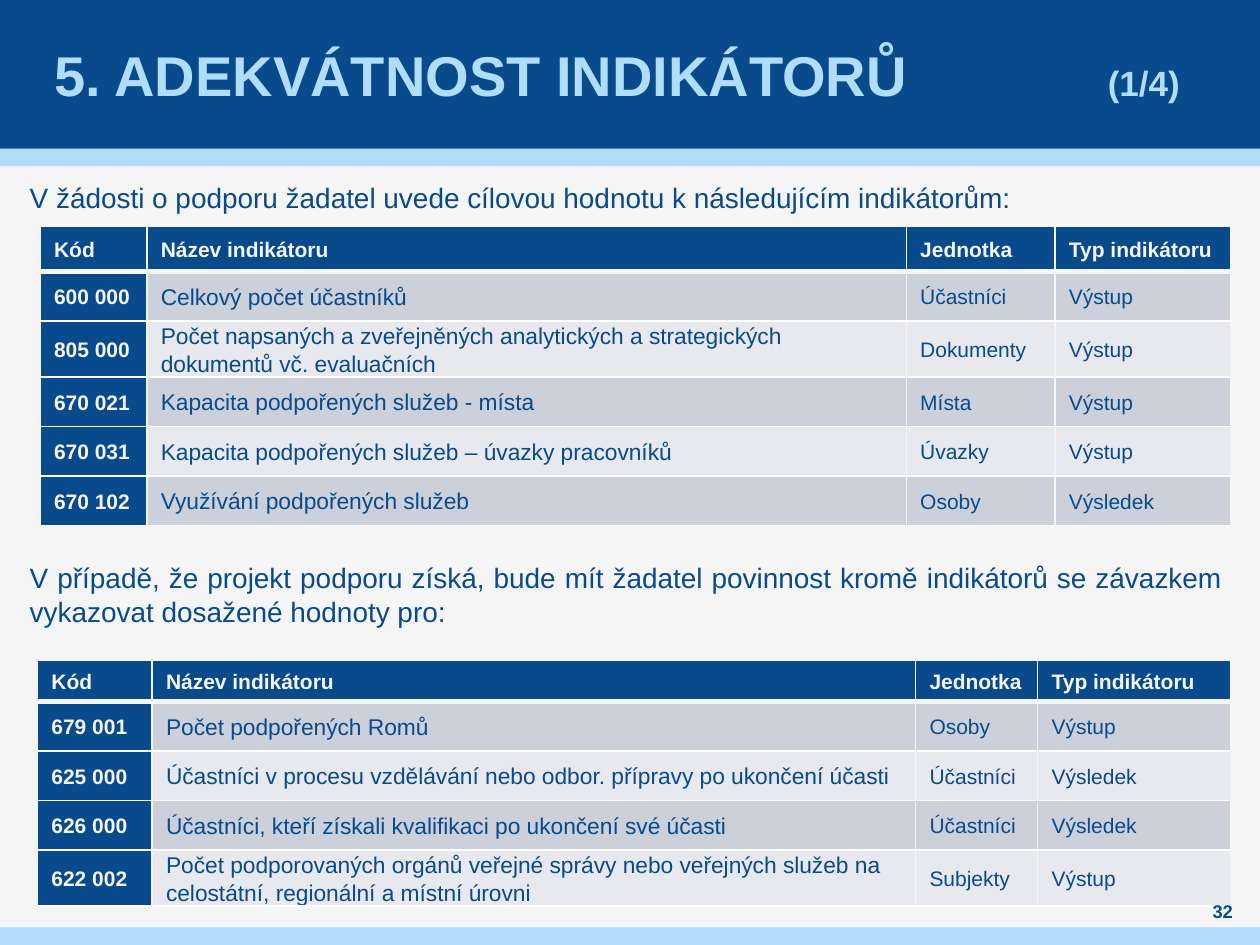
from pptx import Presentation
from pptx.dml.color import RGBColor
from pptx.enum.shapes import MSO_SHAPE
from pptx.enum.text import MSO_ANCHOR, PP_ALIGN
from pptx.oxml.xmlchemy import OxmlElement
from pptx.util import Pt
from lxml.etree import SubElement
from pptx.oxml.ns import qn

NAVY, SKY, PAPER = "084A8B", "AFDDFA", "F5F5F5"
BANDS = ["E7E9EE", "CCD0DA"]


def rgb(value):
    return RGBColor.from_string(value)


def style(p, size, color, bold=False):
    for r in p.runs:
        r.font.name = "Arial"
        r.font.size = Pt(size)
        r.font.bold = bold
        r.font.color.rgb = rgb(color)


prs = Presentation()
prs.slide_width, prs.slide_height = Pt(720), Pt(540)
s = prs.slides.add_slide(prs.slide_layouts[6])
s.background.fill.solid()
s.background.fill.fore_color.rgb = rgb(PAPER)

# Header band, its stripe and the footer stripe
for top, height, color in [(85, 10, SKY), (0, 85, NAVY), (530, 10, SKY)]:
    sp = s.shapes.add_shape(MSO_SHAPE.RECTANGLE, 0, Pt(top), Pt(720), Pt(height))
    sp.shadow.inherit = False
    sp.fill.solid()
    sp.fill.fore_color.rgb = rgb(color)
    sp.line.fill.background()

# Indicator tables: left, top, column widths, header height, rows
header = ("Kód", "Název indikátoru", "Jednotka", "Typ indikátoru")
tables = [
    (22.9, 129.2, (61, 434, 85, 100.7), 26, [
        ("600 000", "Celkový počet účastníků", "Účastníci", "Výstup"),
        ("805 000", "Počet napsaných a zveřejněných analytických a strategických "
         "dokumentů vč. evaluačních", "Dokumenty", "Výstup"),
        ("670 021", "Kapacita podpořených služeb - místa", "Místa", "Výstup"),
        ("670 031", "Kapacita podpořených služeb – úvazky pracovníků", "Úvazky", "Výstup"),
        ("670 102", "Využívání podpořených služeb", "Osoby", "Výsledek")]),
    (21.4, 377.3, (65.5, 436.3, 69.8, 110.2), 23.6, [
        ("679 001", "Počet podpořených Romů", "Osoby", "Výstup"),
        ("625 000", "Účastníci v procesu vzdělávání nebo odbor. přípravy po ukončení účasti",
         "Účastníci", "Výsledek"),
        ("626 000", "Účastníci, kteří získali kvalifikaci po ukončení své účasti",
         "Účastníci", "Výsledek"),
        ("622 002", "Počet podporovaných orgánů veřejné správy nebo veřejných služeb na "
         "celostátní, regionální a místní úrovni", "Subjekty", "Výstup")]),
]
for left, top, widths, head_height, body in tables:
    rows = [header] + body
    heights = [head_height] + [28.3] * len(body)
    tbl = s.shapes.add_table(len(rows), len(header), Pt(left), Pt(top),
                             Pt(sum(widths)), Pt(sum(heights))).table
    for column, width in zip(tbl.columns, widths):
        column.width = Pt(width)
    for i, row in enumerate(rows):
        tbl.rows[i].height = Pt(heights[i])
        for j, text in enumerate(row):
            cell = tbl.cell(i, j)
            cell.margin_left = cell.margin_right = Pt(5)
            cell.margin_top = cell.margin_bottom = 0
            cell.vertical_anchor = MSO_ANCHOR.MIDDLE
            # Body rows take their horizontal rules from the table style,
            # which keeps the two-line rows compact
            tcPr = cell._tc.get_or_add_tcPr()
            for side in "LRTB" if i == 0 else "LR":
                ln = OxmlElement(f"a:ln{side}")
                ln.set("w", str(Pt(3 if side == "B" else 1)))
                SubElement(SubElement(ln, qn("a:solidFill")), qn("a:srgbClr"), val=PAPER)
                tcPr.append(ln)
            strong = i == 0 or j == 0
            cell.fill.solid()
            cell.fill.fore_color.rgb = rgb(NAVY if strong else BANDS[i % 2])
            p = cell.text_frame.paragraphs[0]
            p.text = text
            p.line_spacing = 1.1
            # Spacing around a lone paragraph would only stretch its row
            p.space_before = p.space_after = 0
            p._p.get_or_add_pPr().set("marL", str(Pt(3)))
            style(p, 13 if j == 1 and i else 12, PAPER if strong else NAVY, strong)

# Title, introductions to the tables, page number on top
texts = [
    ((31, 0, 660, 85), "5. ADEKVÁTNOST INDIKÁTORŮ\t", 32, SKY, True, PP_ALIGN.LEFT),
    ((17, 103, 681.5, 22), "V žádosti o podporu žadatel uvede cílovou hodnotu "
     "k následujícím indikátorům:", 16, NAVY, False, PP_ALIGN.JUSTIFY),
    ((17, 320, 681.5, 42), "V případě, že projekt podporu získá, bude mít žadatel "
     "povinnost kromě indikátorů se závazkem vykazovat dosažené hodnoty pro:",
     16, NAVY, False, PP_ALIGN.JUSTIFY),
    ((680.5, 513.5, 36.5, 14), "32", 10.5, NAVY, True, PP_ALIGN.CENTER),
]
for box, text, size, color, bold, align in texts:
    tf = s.shapes.add_textbox(*map(Pt, box)).text_frame
    tf.word_wrap = True
    tf.margin_left = tf.margin_right = tf.margin_top = tf.margin_bottom = 0
    p = tf.paragraphs[0]
    p.text = text
    p.alignment = align
    style(p, size, color, bold)
    if align == PP_ALIGN.JUSTIFY:
        p.line_spacing = 1.02
    else:
        tf.vertical_anchor = MSO_ANCHOR.MIDDLE
    if "\t" in text:
        # Part number after a tab stop
        r = p.add_run()
        r.text = "(1/4)"
        style(p, size, color, bold)
        r.font.size = Pt(20)
        tabs = SubElement(p._p.get_or_add_pPr(), qn("a:tabLst"))
        SubElement(tabs, qn("a:tab"), pos=str(Pt(602)), algn="l")

prs.save("out.pptx")
